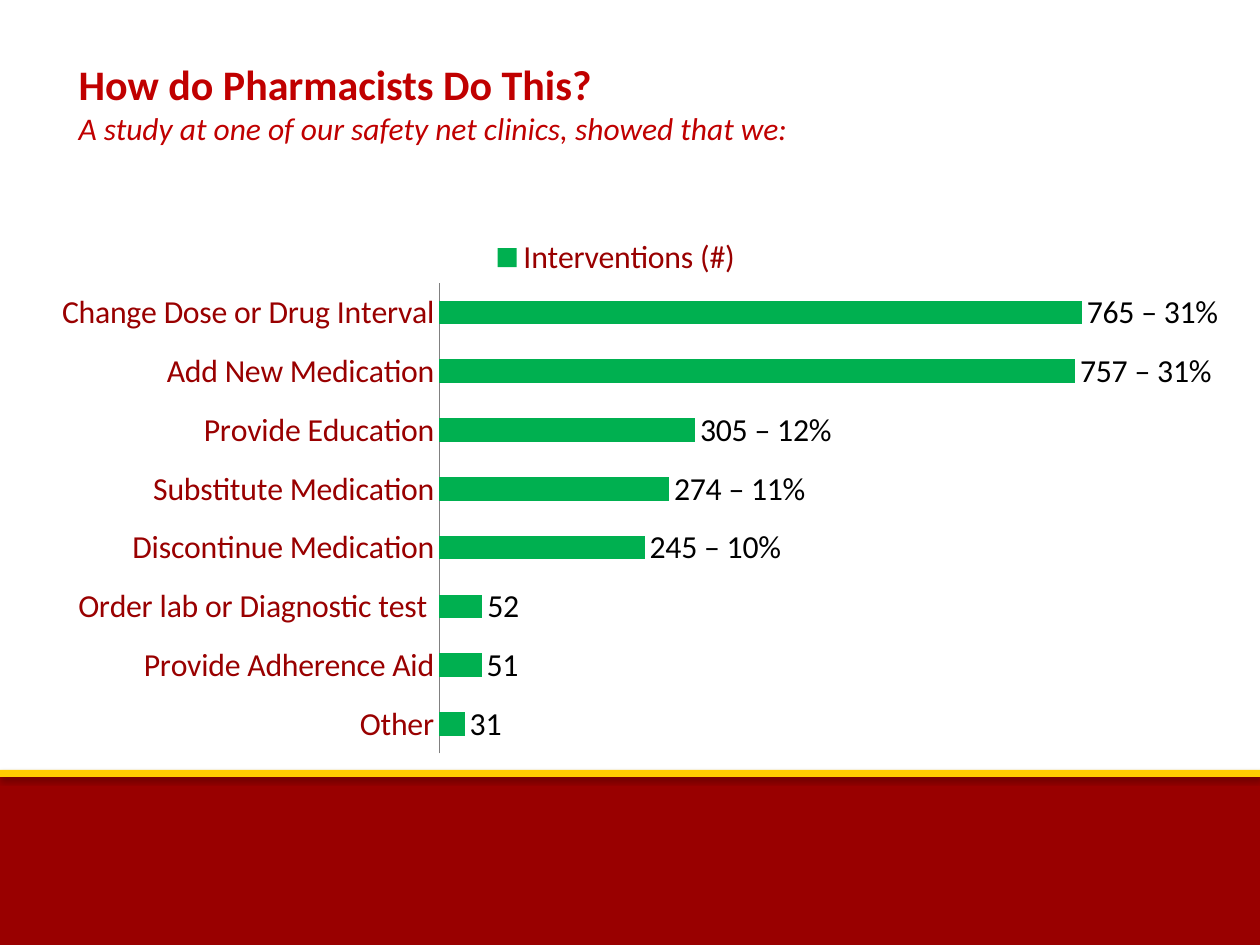
from dataclasses import dataclass

from lxml import etree
from pptx import Presentation
from pptx import util as u
from pptx.chart import data as chart_data
from pptx.dml.color import RGBColor
from pptx.enum import chart as charts, shapes, text
from pptx.oxml import parse_xml
from pptx.oxml import ns

EMU_PER_PX = 914400 // 126


def px(length):
    return u.Emu(length * EMU_PER_PX)


@dataclass(frozen=True)
class Theme:
    font: str = "Calibri"
    title: str = "C00000"
    maroon: str = "990000"
    gold: str = "FFCC00"
    green: str = "00B050"
    black: str = "000000"
    axis: str = "808080"
    title_size: float = 24
    subtitle_size: float = 18
    chart_size: float = 18.3


class SlideBuilder:
    def __init__(self, slide, theme):
        self.slide = slide
        self.theme = theme

    def style(self, font, size, color, bold=False, italic=False):
        font.name = self.theme.font
        font.size = u.Pt(size)
        font.color.rgb = RGBColor.from_string(color)
        font.bold = bold
        font.italic = italic

    def band(self, box, color, opacity, distance):
        shape = self.slide.shapes.add_shape(
            shapes.MSO_SHAPE.RECTANGLE, *map(px, box))
        shape.fill.solid()
        shape.fill.fore_color.rgb = RGBColor.from_string(color)
        shape.line.fill.background()
        shape.shadow.inherit = False
        effects = shape.element.spPr.find(ns.qn("a:effectLst"))
        shadow = etree.SubElement(
            effects, ns.qn("a:outerShdw"), blurRad=str(u.Pt(3.1)),
            dist=str(u.Pt(distance)), dir="5400000", rotWithShape="0")
        tint = etree.SubElement(shadow, ns.qn("a:srgbClr"), val=self.theme.black)
        etree.SubElement(tint, ns.qn("a:alpha"), val=str(opacity * 1000))

    def title(self, box, lines):
        shape = self.slide.shapes.title
        shape.left, shape.top, shape.width, shape.height = map(px, box)
        frame = shape.text_frame
        frame.word_wrap = True
        frame.auto_size = text.MSO_AUTO_SIZE.NONE
        frame.vertical_anchor = text.MSO_ANCHOR.TOP
        for index, (words, size, bold, italic) in enumerate(lines):
            paragraph = frame.add_paragraph() if index else frame.paragraphs[0]
            paragraph.alignment = text.PP_ALIGN.LEFT
            paragraph.space_before = u.Pt(0)
            run = paragraph.add_run()
            run.text = words
            self.style(run.font, size, self.theme.title, bold, italic)

    def bar_chart(self, box, name, rows, maximum, layout):
        theme = self.theme
        data = chart_data.CategoryChartData()
        data.categories = [category for category, _, _ in rows]
        data.add_series(name, [value for _, value, _ in rows])
        chart = self.slide.shapes.add_chart(
            charts.XL_CHART_TYPE.BAR_CLUSTERED, *map(px, box), data).chart
        self.style(chart.font, theme.chart_size, theme.maroon)
        chart.has_title = False
        chart.has_legend = True
        chart.legend.position = charts.XL_LEGEND_POSITION.TOP
        chart.legend.include_in_layout = False

        categories = chart.category_axis
        categories.major_tick_mark = charts.XL_TICK_MARK.NONE
        categories.has_major_gridlines = False
        categories.format.line.color.rgb = RGBColor.from_string(theme.axis)
        categories.format.line.width = u.Pt(0.25)
        values = chart.value_axis
        values.minimum_scale = 0
        values.maximum_scale = maximum
        values.has_major_gridlines = False
        values.visible = False

        plot = chart.plots[0]
        plot.gap_width = 150
        plot.overlap = -25
        plot.vary_by_categories = False
        series = plot.series[0]
        series.format.fill.solid()
        series.format.fill.fore_color.rgb = RGBColor.from_string(theme.green)
        labels = series.data_labels
        labels.show_value = True
        labels.position = charts.XL_LABEL_POSITION.OUTSIDE_END
        self.style(labels.font, theme.chart_size, theme.black)
        for index, (_, _, label) in enumerate(rows):
            if label:
                point_label = series.points[index].data_label
                run = point_label.text_frame.paragraphs[0].add_run()
                run.text = label
                self.style(run.font, theme.chart_size, theme.black)
                point_label.position = charts.XL_LABEL_POSITION.OUTSIDE_END
        self.place_plot(chart, layout)

    def place_plot(self, chart, layout):
        plot_area = chart.element.find(".//" + ns.qn("c:plotArea"))
        for old in plot_area.findall(ns.qn("c:layout")):
            plot_area.remove(old)
        settings = [("layoutTarget", "inner"), ("xMode", "edge"),
                    ("yMode", "edge"), *zip("xywh", layout)]
        items = "".join(f'<c:{tag} val="{value}"/>' for tag, value in settings)
        plot_area.insert(0, parse_xml(
            f'<c:layout {ns.nsdecls("c")}><c:manualLayout>{items}'
            '</c:manualLayout></c:layout>'))


def main():
    theme = Theme()
    presentation = Presentation()
    presentation.slide_width = u.Inches(10)
    presentation.slide_height = u.Inches(7.5)
    slide = presentation.slides.add_slide(presentation.slide_layouts[5])
    builder = SlideBuilder(slide, theme)

    builder.band((0, 777, 1260, 168), theme.maroon, 35, 1.8)
    builder.band((0, 770, 1260, 7), theme.gold, 38, 1.6)
    builder.title((66, 52, 1235, 102), [
        ("How do Pharmacists Do This?", theme.title_size, True, False),
        ("A study at one of our safety net clinics, showed that we:",
         theme.subtitle_size, False, True),
    ])
    builder.bar_chart((25, 223, 1194, 547), "Interventions (#)", [
        ("Other", 31, None),
        ("Provide Adherence Aid", 51, None),
        ("Order lab or Diagnostic test ", 52, None),
        ("Discontinue Medication", 245, "245 – 10%"),
        ("Substitute Medication", 274, "274 – 11%"),
        ("Provide Education", 305, "305 – 12%"),
        ("Add New Medication", 757, "757 – 31%"),
        ("Change Dose or Drug Interval", 765, "765 – 31%"),
    ], 900, (0.35, 0.11, 0.64, 0.86))
    presentation.save("out.pptx")


if __name__ == "__main__":
    main()
